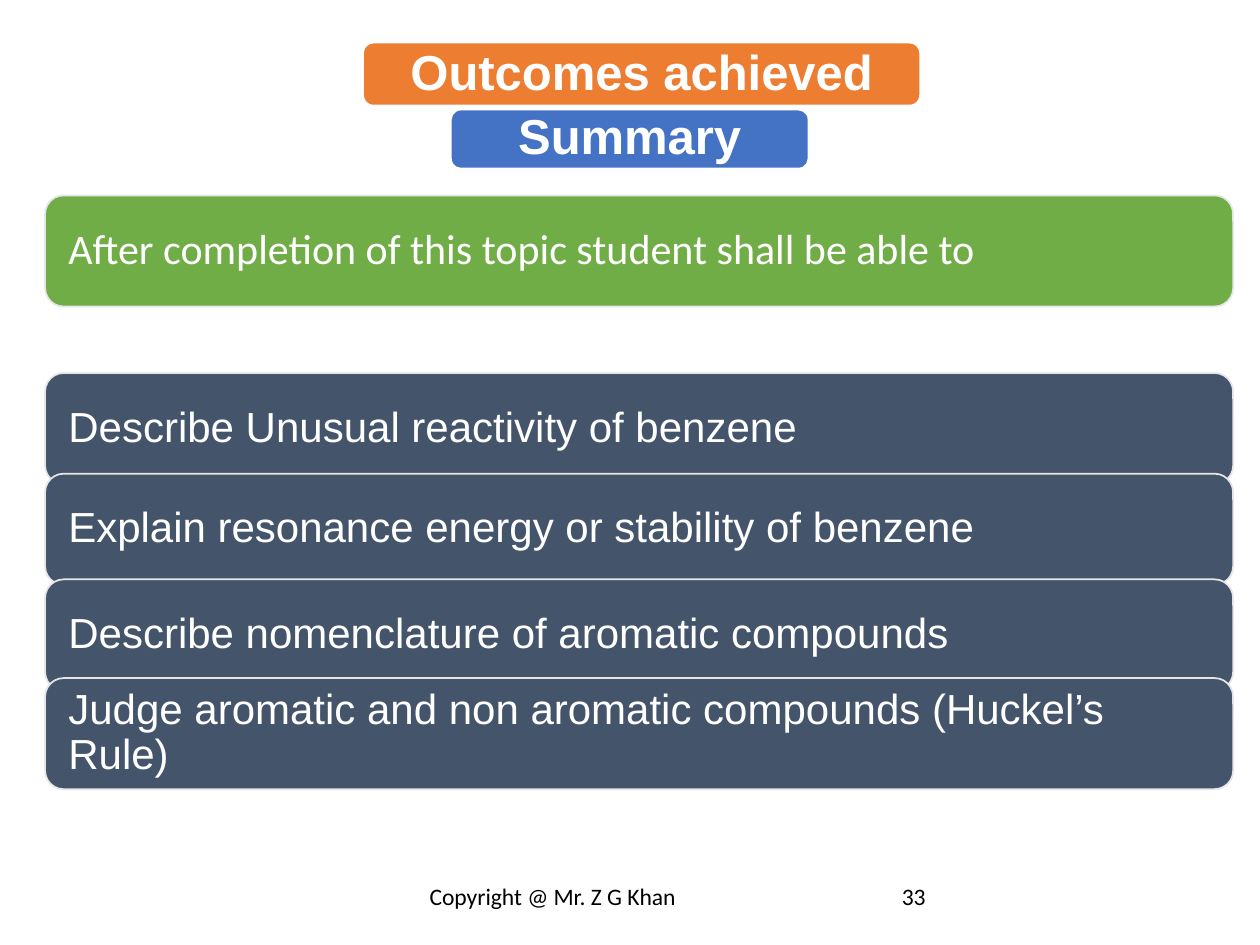
import pptx
import pptx.util
import pptx.dml.color
import pptx.enum.shapes
import pptx.enum.text

Cm, Pt = pptx.util.Cm, pptx.util.Pt
ALIGN = pptx.enum.text.PP_ALIGN
ROUND = pptx.enum.shapes.MSO_SHAPE.ROUNDED_RECTANGLE

# Content: text, then place in cm
TITLE = ("Outcomes achieved", (7.32, 0.86, 11.23, 1.27))
SUMMARY = ("Summary", (9.09, 2.21, 7.21, 1.19))
INTRO = ("After completion of this topic student shall be able to", 3.94)
GOALS = [
    ("Describe Unusual reactivity of benzene", 7.52),
    ("Explain resonance energy or stability of benzene", 9.55),
    ("Describe nomenclature of aromatic compounds", 11.68),
    ("Judge aromatic and non aromatic compounds (Huckel’s Rule)", 13.67),
]
FOOTER = [
    ("Copyright @ Mr. Z G Khan", (8.41, 17.65, 8.59, 1.02)),
    ("33", (17.93, 17.65, 5.72, 1.02)),
]
ROW_LEFT, ROW_WIDTH, ROW_HEIGHT = 0.91, 23.95, 2.24


def color(code):
    return pptx.dml.color.RGBColor.from_string(code)


def write(shape, text, size, face="Arial", ink="FFFFFF", bold=False,
          align=ALIGN.LEFT):
    para = shape.text_frame.paragraphs[0]
    para.text = text
    para.alignment = align
    para.font.size = Pt(size)
    para.font.name = face
    para.font.bold = bold
    para.font.color.rgb = color(ink)
    return para


def center(shape, side):
    frame = shape.text_frame
    frame.word_wrap = True
    frame.auto_size = pptx.enum.text.MSO_AUTO_SIZE.NONE
    frame.vertical_anchor = pptx.enum.text.MSO_ANCHOR.MIDDLE
    frame.margin_left = frame.margin_right = Cm(side)
    frame.margin_top = frame.margin_bottom = 0
    frame.paragraphs[0].line_spacing = 0.9


def add_box(slide, place, fill, line):
    box = slide.shapes.add_shape(ROUND, *map(Cm, place))
    box.shadow.inherit = False
    box.fill.solid()
    box.fill.fore_color.rgb = color(fill)
    box.line.color.rgb = color(line)
    box.line.width = Pt(1)
    return box


def add_row(slide, text, top, fill, face="Arial"):
    box = add_box(slide, (ROW_LEFT, top, ROW_WIDTH, ROW_HEIGHT), fill, "E7E6E6")
    write(box, text, 24, face)
    center(box, 0.36)


def main():
    deck = pptx.Presentation()
    deck.slide_width, deck.slide_height = Cm(25.4), Cm(19.05)
    slide = deck.slides.add_slide(deck.slide_layouts[5])

    # Title on its orange plate
    text, place = TITLE
    add_box(slide, place, "ED7D31", "FFFFFF")
    title = slide.shapes.title
    title.left, title.top, title.width, title.height = map(Cm, place)
    title.element.getparent().append(title.element)
    write(title, text, 28, bold=True, align=ALIGN.CENTER)
    center(title, 0.3)

    # Summary plate
    text, place = SUMMARY
    plate = add_box(slide, place, "4472C4", "FFFFFF")
    write(plate, text, 28, bold=True, align=ALIGN.CENTER)
    center(plate, 0.3)

    # Intro and goals
    add_row(slide, *INTRO, "70AD47", "Calibri")
    for text, top in GOALS:
        add_row(slide, text, top, "44546A")

    # Footer
    for text, place in FOOTER:
        note = slide.shapes.add_textbox(*map(Cm, place))
        note.text_frame.word_wrap = True
        write(note, text, 13.5, "Calibri", "000000")

    deck.save("out.pptx")


if __name__ == "__main__":
    main()
